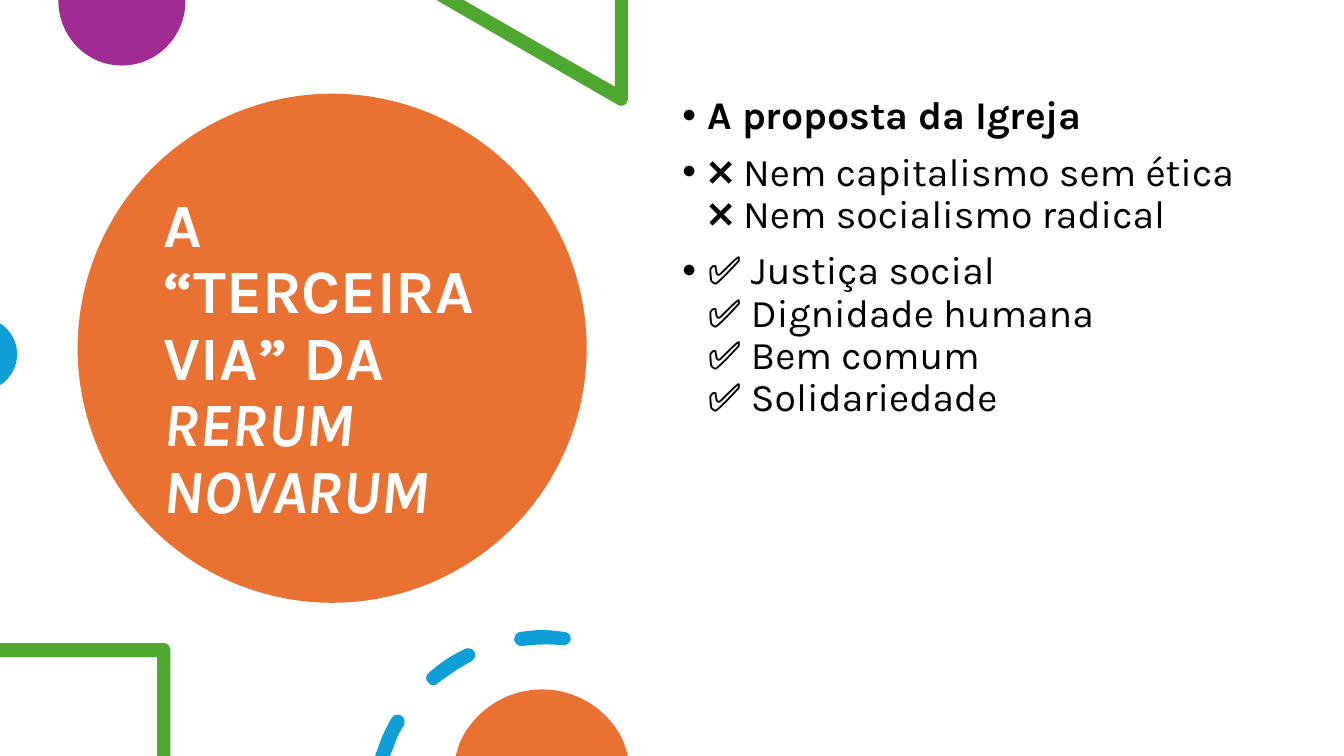
from copy import deepcopy

from lxml.etree import Element, SubElement
from pptx import Presentation
from pptx.dml.color import RGBColor
from pptx.enum.shapes import MSO_SHAPE
from pptx.enum.text import MSO_ANCHOR, MSO_AUTO_SIZE, PP_ALIGN
from pptx.oxml.ns import qn
from pptx.util import Inches, Pt

ORANGE = RGBColor(0xE9, 0x71, 0x32)
PURPLE = RGBColor(0xA0, 0x2B, 0x93)
GREEN = RGBColor(0x4E, 0xA7, 0x2E)
BLUE = RGBColor(0x0F, 0x9E, 0xD5)
WHITE = RGBColor(0xFF, 0xFF, 0xFF)
BLACK = RGBColor(0, 0, 0)
FONT = "Karla"

PURPLE_DISC = [[(1.84, 0), (0.58, 0), (0.58, 0.01),
                (0.58, 0.36, 0.86, 0.65, 1.21, 0.65),
                (1.56, 0.65, 1.84, 0.36, 1.84, 0.01)]]
TRIANGLE = [[(6.23, 0), (6.1, 0), (6.1, 0.86), (4.6, 0), (4.33, 0), (6.13, 1.04),
             (6.14, 1.05, 6.15, 1.05, 6.16, 1.05),
             (6.2, 1.05, 6.23, 1.02, 6.23, 0.98)]]
BLUE_DISC = [[(0, 3.21), (0, 3.82), (0.02, 3.81),
              (0.11, 3.74, 0.17, 3.64, 0.17, 3.51),
              (0.17, 3.39, 0.11, 3.29, 0.02, 3.22)]]
SQUARE = [[(1.63, 6.38), (0, 6.38), (0, 6.52), (1.56, 6.52), (1.56, 7.5),
           (1.69, 7.5), (1.69, 6.45), (1.69, 6.41, 1.66, 6.38, 1.63, 6.38)]]
DASHES = [
    [(3.95, 7.09), (3.93, 7.08, 3.9, 7.1, 3.89, 7.12),
     (3.85, 7.18, 3.82, 7.25, 3.79, 7.31), (3.72, 7.5), (3.87, 7.5), (3.92, 7.37),
     (3.94, 7.31, 3.97, 7.25, 4.01, 7.19), (4.02, 7.16, 4.01, 7.11, 3.98, 7.1),
     (3.97, 7.09, 3.96, 7.09, 3.95, 7.09)],
    [(4.64, 6.43), (4.63, 6.43, 4.62, 6.43, 4.61, 6.44),
     (4.48, 6.5, 4.36, 6.58, 4.25, 6.68), (4.22, 6.7, 4.22, 6.75, 4.25, 6.77),
     (4.26, 6.79, 4.28, 6.8, 4.3, 6.8), (4.32, 6.8, 4.33, 6.79, 4.34, 6.78),
     (4.45, 6.7, 4.56, 6.62, 4.68, 6.56), (4.71, 6.54, 4.72, 6.5, 4.71, 6.47),
     (4.69, 6.44, 4.67, 6.43, 4.64, 6.43)],
    [(5.38, 6.25), (5.31, 6.25, 5.24, 6.26, 5.16, 6.27),
     (5.13, 6.27, 5.1, 6.31, 5.1, 6.35), (5.11, 6.38, 5.14, 6.41, 5.17, 6.41),
     (5.18, 6.41, 5.18, 6.41, 5.18, 6.41), (5.32, 6.39, 5.45, 6.39, 5.58, 6.4),
     (5.62, 6.41, 5.65, 6.38, 5.66, 6.35), (5.67, 6.31, 5.64, 6.27, 5.6, 6.27),
     (5.53, 6.26, 5.45, 6.25, 5.38, 6.25)],
]
ORANGE_DISC = [[(5.38, 6.84), (5.01, 6.84, 4.7, 7.06, 4.56, 7.37), (4.52, 7.5),
                (6.23, 7.5), (6.19, 7.37), (6.06, 7.06, 5.74, 6.84, 5.38, 6.84)]]

PROPOSALS = [
    ("A proposta da Igreja", True),
    ("❌ Nem capitalismo sem ética\n❌ Nem socialismo radical", False),
    ("✅ Justiça social\n✅ Dignidade humana\n✅ Bem comum\n✅ Solidariedade", False),
]


def paint(shape, color):
    shape.shadow.inherit = False
    shape.fill.solid()
    shape.fill.fore_color.rgb = color
    shape.line.fill.background()


def bend(shape, segments):
    straight_lines = list(shape._element.iter(qn("a:lnTo")))
    for straight, segment in zip(straight_lines, segments):
        if len(segment) == 2:
            continue
        curve = Element(qn("a:cubicBezTo"))
        for x, y in zip(segment[::2], segment[1::2]):
            point = SubElement(curve, qn("a:pt"))
            point.set("x", str(Inches(x) - shape.left))
            point.set("y", str(Inches(y) - shape.top))
        straight.getparent().replace(straight, curve)


def add_outline(slide, contours, color):
    ends = [[(Inches(segment[-2]), Inches(segment[-1])) for segment in contour]
            for contour in contours]
    builder = slide.shapes.build_freeform(*ends[0][0])
    for index, points in enumerate(ends):
        if index:
            builder.move_to(*points[0])
        builder.add_line_segments(points[1:], close=False)
        builder.add_line_segments([], close=True)
    outline = builder.convert_to_shape()
    bend(outline, [segment for contour in contours for segment in contour[1:]])
    paint(outline, color)


def place(placeholder, left, top, width, height, anchor):
    placeholder.left, placeholder.top = Inches(left), Inches(top)
    placeholder.width, placeholder.height = Inches(width), Inches(height)
    frame = placeholder.text_frame
    frame.word_wrap = True
    frame.auto_size = MSO_AUTO_SIZE.NONE
    frame.vertical_anchor = anchor
    return frame


def add_text(paragraph, text, *, size, color, bold=False, italic=False):
    for index, line in enumerate(text.split("\n")):
        if index:
            paragraph.add_line_break()
        run = paragraph.add_run()
        run.text = line
        font = run.font
        font.name, font.size = FONT, Pt(size)
        font.bold, font.italic = bold, italic
        font.color.rgb = color
        if index:
            line_break = run._r.getprevious()
            line_break.append(deepcopy(run._r.find(qn("a:rPr"))))


def format_paragraph(paragraph, space_before=0):
    paragraph.alignment = PP_ALIGN.LEFT
    paragraph.line_spacing = 0.9
    paragraph.space_before = Pt(space_before)


def add_bullet(paragraph):
    properties = paragraph._p.get_or_add_pPr()
    properties.set("marL", str(Inches(0.25)))
    properties.set("indent", str(Inches(-0.25)))
    SubElement(properties, qn("a:buFont")).set("typeface", "Arial")
    SubElement(properties, qn("a:buChar")).set("char", "•")


def add_title(slide):
    frame = place(slide.shapes.title, 1.52, 1.35, 3.54, 4.45, MSO_ANCHOR.MIDDLE)
    heading = frame.paragraphs[0]
    format_paragraph(heading)
    add_text(heading, "A “TERCEIRA VIA” DA ", size=44, color=WHITE, bold=True)
    add_text(heading, "RERUM NOVARUM", size=44, color=WHITE, bold=True, italic=True)


def add_proposals(slide):
    frame = place(slide.placeholders[1], 6.67, 0.9, 5.75, 5.35, MSO_ANCHOR.TOP)
    for index, (text, bold) in enumerate(PROPOSALS):
        paragraph = frame.add_paragraph() if index else frame.paragraphs[0]
        add_bullet(paragraph)
        format_paragraph(paragraph, 10 if index else 0)
        add_text(paragraph, text, size=28, color=BLACK, bold=bold)


def add_title_disc(slide):
    disc = slide.shapes.add_shape(MSO_SHAPE.OVAL, Inches(0.77), Inches(0.93),
                                  Inches(5.05), Inches(5.05))
    paint(disc, ORANGE)
    slide.shapes.title._element.addprevious(disc._element)


def main():
    deck = Presentation()
    deck.slide_width, deck.slide_height = Inches(40 / 3), Inches(7.5)
    slide = deck.slides.add_slide(deck.slide_layouts[1])
    slide.background.fill.solid()
    slide.background.fill.fore_color.rgb = WHITE
    add_title_disc(slide)
    add_title(slide)
    for contours, color in [(PURPLE_DISC, PURPLE), (TRIANGLE, GREEN), (BLUE_DISC, BLUE)]:
        add_outline(slide, contours, color)
    add_proposals(slide)
    for contours, color in [(SQUARE, GREEN), (DASHES, BLUE), (ORANGE_DISC, ORANGE)]:
        add_outline(slide, contours, color)
    deck.save("out.pptx")


if __name__ == "__main__":
    main()
